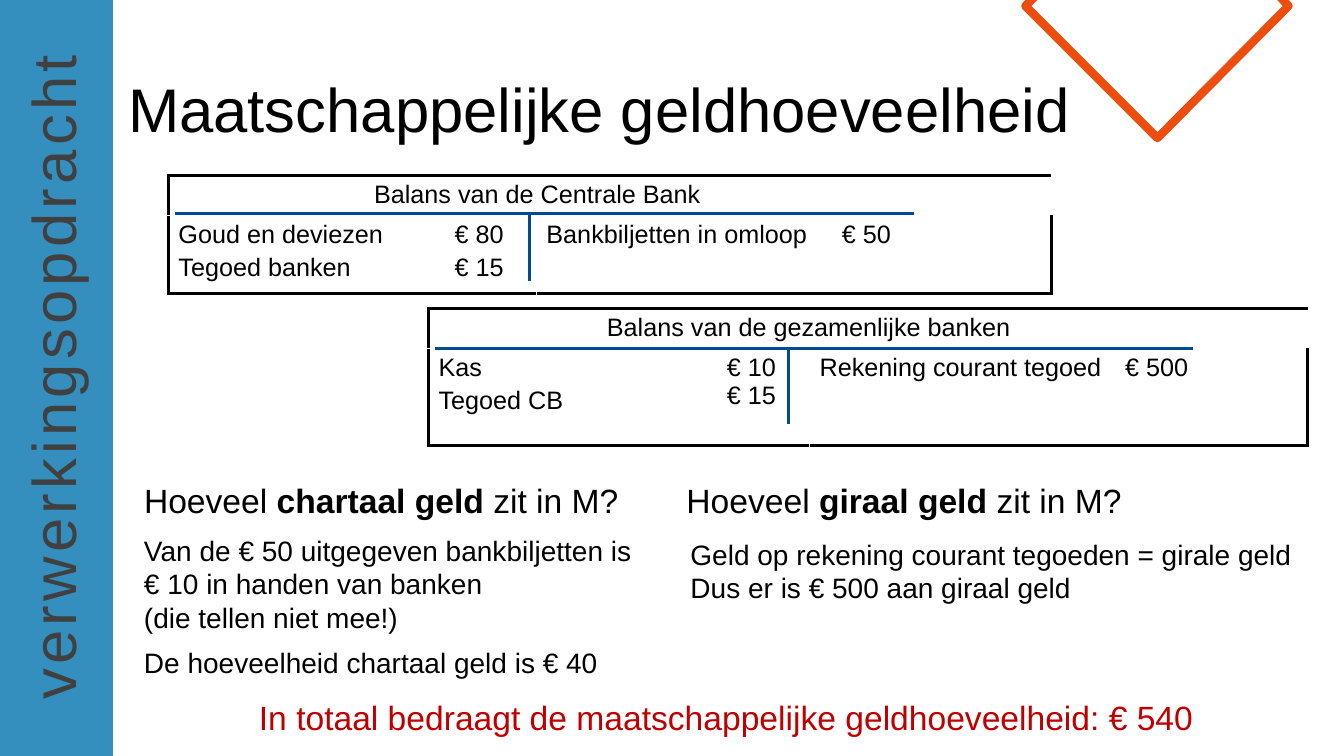
from lxml.etree import SubElement
from pptx import Presentation
from pptx.dml.color import RGBColor
from pptx.enum.shapes import MSO_CONNECTOR, MSO_SHAPE
from pptx.enum.text import MSO_ANCHOR, PP_ALIGN
from pptx.oxml.ns import qn
from pptx.util import Inches, Pt

BLACK = RGBColor(0x00, 0x00, 0x00)
WHITE = RGBColor(0xFF, 0xFF, 0xFF)
GREY = RGBColor(0x40, 0x40, 0x40)
BAND_BLUE = RGBColor(0x1A, 0x80, 0xB6)
LINE_BLUE = RGBColor(0x00, 0x4B, 0x95)
ORANGE = RGBColor(0xED, 0x4D, 0x0F)
RED = RGBColor(0xC0, 0x00, 0x00)


def write(frame, paragraphs, size, color=BLACK, gap=0):
    """Fill a text frame; each paragraph is a list of (text, bold) runs."""
    for index, runs in enumerate(paragraphs):
        paragraph = frame.paragraphs[0] if index == 0 else frame.add_paragraph()
        paragraph.alignment = PP_ALIGN.LEFT
        if index:
            paragraph.space_before = Pt(gap)
        for text, bold in runs:
            # A vertical tab marks a line break inside a paragraph
            for part, line in enumerate(text.split("\v")):
                if part:
                    paragraph.add_line_break()
                run = paragraph.add_run()
                run.text = line
                for name, value in {"name": "Arial", "size": Pt(size), "bold": bold}.items():
                    setattr(run.font, name, value)
                run.font.color.rgb = color


def set_border(cell, side, width, color):
    """Draw one side of a cell, or clear it when color is None."""
    border = SubElement(cell._tc.get_or_add_tcPr(), qn(f"a:ln{side}"), w=str(Pt(width)))
    if color is None:
        SubElement(border, qn("a:noFill"))
    else:
        fill = SubElement(border, qn("a:solidFill"))
        SubElement(fill, qn("a:srgbClr"), val=str(color))


prs = Presentation()
prs.slide_width, prs.slide_height = Inches(13.33), Inches(7.5)
slide = prs.slides.add_slide(prs.slide_layouts[5])
shapes = slide.shapes

# Orange corner diamond
corners = [(Inches(x), Inches(y)) for x, y in
           [(10.3, -0.07), (12.66, -0.07), (12.78, 0.06), (11.48, 1.37), (10.17, 0.06)]]
builder = shapes.build_freeform(*corners[0], scale=1.0)
builder.add_line_segments(corners[1:], close=True)
diamond = builder.convert_to_shape()
diamond.shadow.inherit = False
diamond.fill.background()
diamond.line.color.rgb = ORANGE
diamond.line.width = Pt(6)

# Blue side band with its rotated label
band = shapes.add_shape(MSO_SHAPE.RECTANGLE, 0, 0, Inches(1.12), Inches(7.5))
band.shadow.inherit = False
band.fill.solid()
band.fill.fore_color.rgb = BAND_BLUE
band.line.fill.background()
band_color = band.fill._xPr.find(qn("a:solidFill")).find(qn("a:srgbClr"))
SubElement(band_color, qn("a:alpha"), val="88000")

label = shapes.add_textbox(Inches(-2.83), Inches(3.27), Inches(6.7), Inches(0.84))
label.rotation = 270
label.text_frame.word_wrap = False
write(label.text_frame, [[("verwerkingsopdracht", False)]], 44, GREY)
label.text_frame.paragraphs[0].runs[0].font._element.set("spc", "300")

# Title
title = shapes.title
title.left, title.top, title.width, title.height = (
    Inches(1.17), Inches(0.39), Inches(12.17), Inches(1.45))
title.text_frame.vertical_anchor = MSO_ANCHOR.MIDDLE
write(title.text_frame, [[("Maatschappelijke geldhoeveelheid", False)]], 44)
title.text_frame.paragraphs[0].line_spacing = 0.9

# Balance sheets: heading, entries per column, and the T of blue lines
balances = [
    {"at": (1.67, 1.74), "cols": (2.74, 0.91, 2.93, 0.91), "rows": (0.39, 0.77),
     "heading": "Balans van de Centrale Bank", "heading_left": 2.04,
     "entries": [["Goud en deviezen", "Tegoed banken"], ["€ 80", "€ 15"],
                 ["Bankbiljetten in omloop"], ["€ 50"]],
     "bar": (1.74, 9.07, 2.12), "stem": (5.25, 2.79)},
    {"at": (4.25, 3.06), "cols": (2.86, 0.92, 3.03, 0.94), "rows": (0.4, 0.96),
     "heading": "Balans van de gezamenlijke banken", "heading_left": 1.77,
     "entries": [["Kas", "Tegoed CB"], ["€ 10\v€ 15"],
                 ["Rekening courant tegoed"], ["€ 500"]],
     "bar": (4.31, 11.83, 3.46), "stem": (7.82, 4.21)},
]
for balance in balances:
    left, top = balance["at"]
    sheet = shapes.add_table(2, 4, Inches(left), Inches(top),
                             Inches(sum(balance["cols"])), Inches(sum(balance["rows"]))).table
    sheet.first_row = sheet.horz_banding = False
    for column, width in zip(sheet.columns, balance["cols"]):
        column.width = Inches(width)
    for row, height in zip(sheet.rows, balance["rows"]):
        row.height = Inches(height)

    heading = sheet.cell(0, 0)
    heading.merge(sheet.cell(0, 3))
    heading.margin_left = Inches(balance["heading_left"])
    write(heading.text_frame, [[(balance["heading"], False)]], 18)
    for col, entries in enumerate(balance["entries"]):
        write(sheet.cell(1, col).text_frame, [[(entry, False)] for entry in entries], 18, gap=3)

    # Black outer frame, white inner edges
    outer, inner, none = (2.25, BLACK), (1, WHITE), (1, None)
    for row in range(2):
        for col in range(4):
            cell = sheet.cell(row, col)
            middle = inner if row else none
            set_border(cell, "L", *(outer if col == 0 else middle if col == 2 else none))
            set_border(cell, "R", *(outer if col == 3 else middle if col == 1 else none))
            set_border(cell, "T", *(inner if row else outer))
            set_border(cell, "B", *(outer if row else inner))
            cell.fill.background()

    bar_left, bar_right, bar_y = balance["bar"]
    stem_x, stem_bottom = balance["stem"]
    t_lines = shapes.add_group_shape()
    for ends in [(bar_left, bar_y, bar_right, bar_y), (stem_x, bar_y, stem_x, stem_bottom)]:
        line = t_lines.shapes.add_connector(MSO_CONNECTOR.STRAIGHT, *map(Inches, ends))
        line.line.color.rgb = LINE_BLUE
        line.line.width = Pt(2.25)
        SubElement(line._element.spPr, qn("a:effectLst"))

# Questions, answers and conclusion: box, wrap, size, colour, paragraphs
texts = [
    ((1.33, 4.71, 4.95, 0.5), False, 24, BLACK,
     [[("Hoeveel ", False), ("chartaal geld ", True), ("zit in M?", False)]]),
    ((6.71, 4.71, 4.56, 0.5), False, 24, BLACK,
     [[("Hoeveel ", False), ("giraal geld ", True), ("zit in M?", False)]]),
    ((1.33, 5.24, 6.23, 1.62), True, 20, BLACK,
     [[("Van de € 50 uitgegeven bankbiljetten is\v€ 10 in handen van banken\v"
        "(die tellen niet mee!)", False)],
      [("De hoeveelheid chartaal geld is € 40", False)]]),
    ((6.75, 5.28, 6.17, 0.77), True, 20, BLACK,
     [[("Geld op rekening courant tegoeden = girale geld\v"
        "Dus er is € 500 aan giraal geld", False)]]),
    ((2.47, 6.86, 9.57, 0.5), False, 24, RED,
     [[("In totaal bedraagt de maatschappelijke geldhoeveelheid: € 540", False)]]),
]
for box, wrap, size, color, paragraphs in texts:
    frame = shapes.add_textbox(*map(Inches, box)).text_frame
    frame.word_wrap = wrap
    write(frame, paragraphs, size, color, gap=8.5)

prs.save("out.pptx")
